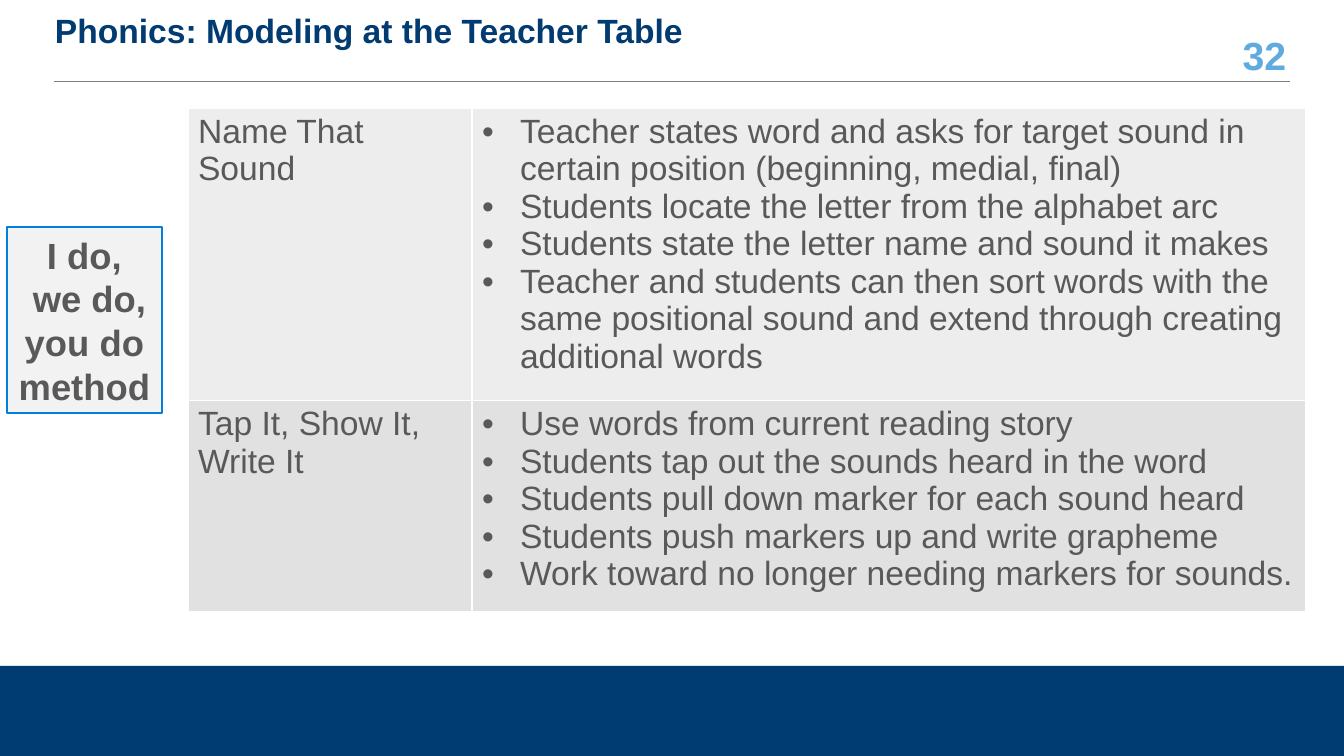
"""Builds the slide on modeling phonics at the teacher table."""
from lxml import etree
from pptx import Presentation
from pptx import util as u
from pptx.dml.color import RGBColor
from pptx.enum import shapes, text
from pptx.oxml.ns import qn

TITLE = "Phonics: Modeling at the Teacher Table"
NUMBER = "32"
METHOD = ["I do,", " we do, you do method"]
ACTIVITIES = [
    ("Name That Sound", "EDEDED", 272, [
        "Teacher states word and asks for target sound in certain position (beginning, medial, final)",
        "Students locate the letter from the alphabet arc",
        "Students state the letter name and sound it makes",
        "Teacher and students can then sort words with the same positional sound "
        "and extend through creating additional words",
    ]),
    ("Tap It, Show It, Write It", "E1E1E1", 197, [
        "Use words from current reading story",
        "Students tap out the sounds heard in the word",
        "Students pull down marker for each sound heard",
        "Students push markers up and write grapheme",
        "Work toward no longer needing markers for sounds.",
    ]),
]
COLUMNS = (284, 834)
NAVY, SKY, BLUE, GRAY = "003B71", "5FAADE", "007FDC", "595959"
WHITE, PALE, RULE = "FFFFFF", "F2F2F2", "808080"
INDENT = 38


def px(length):
    return u.Emu(round(length * 914400 / 100.8))


def color(value):
    return RGBColor.from_string(value)


def write(frame, lines, size, ink, bold=False, align=text.PP_ALIGN.LEFT, bullets=False):
    for index, line in enumerate(lines):
        para = frame.paragraphs[0] if index == 0 else frame.add_paragraph()
        para.alignment = align
        if bullets:
            props = para._p.get_or_add_pPr()
            props.set("marL", str(px(INDENT)))
            props.set("indent", str(-px(INDENT)))
            etree.SubElement(props, qn("a:buFont"), typeface="Arial")
            etree.SubElement(props, qn("a:buChar"), char="•")
        span = para.add_run()
        span.text = line
        for name, value in {"name": "Arial", "size": u.Pt(size), "bold": bold}.items():
            setattr(span.font, name, value)
        span.font.color.rgb = color(ink)


def add_text(page, area, line, size, ink, align):
    frame = page.shapes.add_textbox(*map(px, area)).text_frame
    frame.word_wrap = True
    frame.vertical_anchor = text.MSO_ANCHOR.MIDDLE
    write(frame, [line], size, ink, True, align)


def add_box(page, area, fill, line=None):
    box = page.shapes.add_shape(shapes.MSO_SHAPE.RECTANGLE, *map(px, area))
    box.shadow.inherit = False
    box.fill.solid()
    box.fill.fore_color.rgb = color(fill)
    if line:
        box.line.color.rgb = color(line)
        box.line.width = u.Pt(1)
    else:
        box.line.fill.background()
    return box


def add_rule(page, left, right, top):
    rule = page.shapes.add_connector(
        shapes.MSO_CONNECTOR.STRAIGHT, px(left), px(top), px(right), px(top))
    rule.line.color.rgb = color(RULE)
    rule.line.width = u.Pt(0.5)
    etree.SubElement(rule._element.spPr, qn("a:effectLst"))


def style_cell(cell, fill):
    props = cell._tc.get_or_add_tcPr()
    for side in ("lnL", "lnR", "lnT", "lnB"):
        border = etree.SubElement(props, qn("a:" + side), w=str(u.Pt(1)))
        paint = etree.SubElement(border, qn("a:solidFill"))
        etree.SubElement(paint, qn("a:srgbClr"), val=WHITE)
    cell.fill.solid()
    cell.fill.fore_color.rgb = color(fill)


def add_activities(page, left, top):
    height = sum(activity[2] for activity in ACTIVITIES)
    area = map(px, (left, top, sum(COLUMNS), height))
    table = page.shapes.add_table(len(ACTIVITIES), len(COLUMNS), *area).table
    table.first_row = table.horz_banding = False
    for column, width in zip(table.columns, COLUMNS):
        column.width = px(width)
    for row, (name, fill, row_height, steps) in zip(table.rows, ACTIVITIES):
        row.height = px(row_height)
        for cell, lines in zip(row.cells, ([name], steps)):
            style_cell(cell, fill)
            write(cell.text_frame, lines, 24, GRAY, bullets=lines is steps)


def main():
    deck = Presentation()
    deck.slide_width, deck.slide_height = px(1344), px(756)
    page = deck.slides.add_slide(deck.slide_layouts[6])
    add_box(page, (0, 666, 1344, 90), NAVY)
    add_text(page, (1196, 34, 100, 42), NUMBER, 28, SKY, text.PP_ALIGN.RIGHT)
    add_rule(page, 54, 1290, 81)
    add_text(page, (45, 9, 1169, 42), TITLE, 24, NAVY, text.PP_ALIGN.LEFT)
    add_activities(page, 188, 108)
    method = add_box(page, (7, 227, 155, 186), PALE, BLUE)
    method.text_frame.word_wrap = True
    write(method.text_frame, METHOD, 26, GRAY, True, text.PP_ALIGN.CENTER)
    deck.save("out.pptx")


if __name__ == "__main__":
    main()
